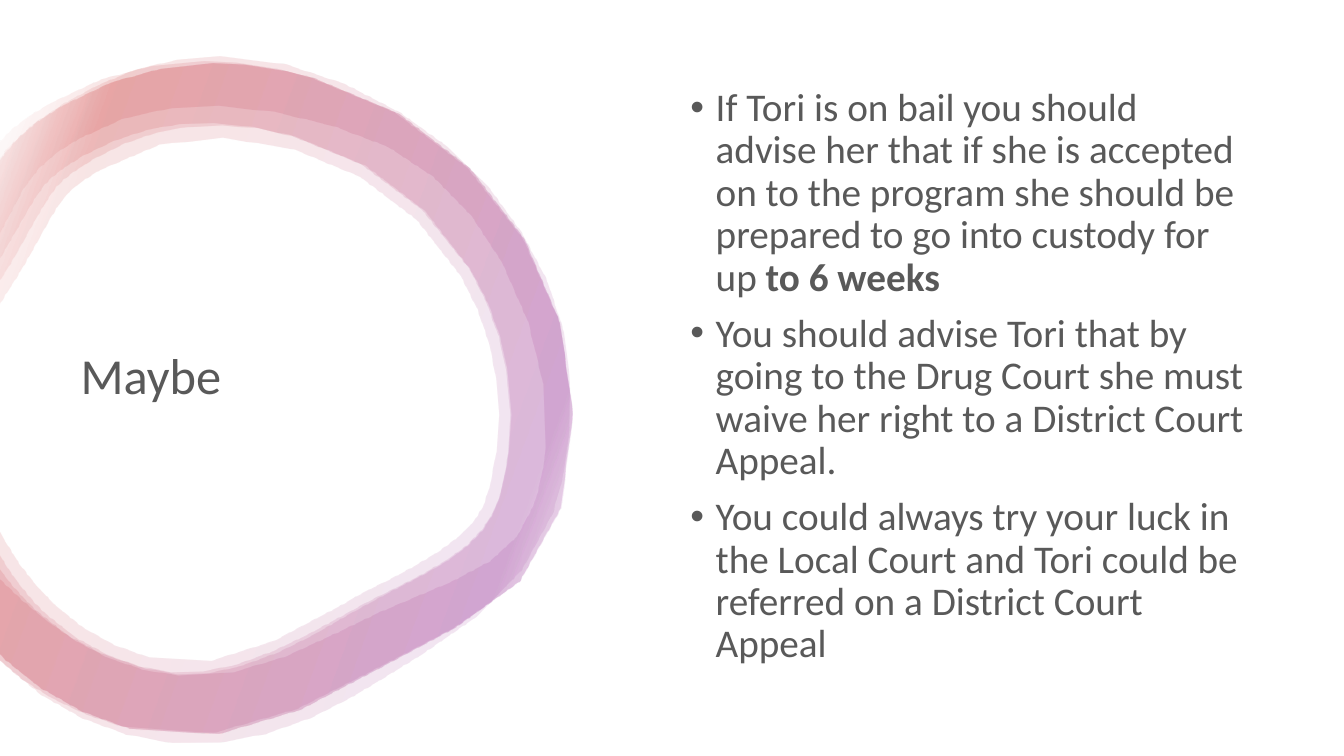
import pptx
import pptx.dml.color
import pptx.enum.shapes
import pptx.enum.text
import pptx.oxml
import pptx.oxml.ns
import pptx.util

PX = 9144
SLIDE = (1333, 750)
CURVE_STEPS = 3

TITLE = "Maybe"
TITLE_BOX = (70, 136, 422, 478)
ADVICE_BOX = (675, 88, 571, 572)
ADVICE = [
    [("If Tori is on bail you should advise her that if she is accepted on to the "
      "program she should be prepared to go into custody for up ", False),
     ("to 6 weeks", True)],
    [("You should advise Tori that by going to the Drug Court she must waive her "
      "right to a District Court Appeal.", False)],
    [("You could always try your luck in the Local Court and Tori could be "
      "referred on a District Court Appeal", False)],
]
TEXT_COLOR = "595959"
FONT = "Calibri"

RING_STOPS = [(2, "FFFFFF"), (16, "800080"), (85, "C00000"), (100, "FFFFFF")]
RING_ALPHA = 10
RING_ANGLE = 200

PALE_RING = [
    (218, 56),
    (284, 56, 344, 80, 397, 112), (445, 142, 488, 182, 517, 231),
    (545, 275, 565, 330, 565, 383), (565, 426, 562, 469, 548, 508),
    (526, 570, 475, 616, 418, 649), (382, 671, 348, 694, 308, 712),
    (264, 731, 218, 741, 171, 737), (125, 732, 80, 716, 41, 689),
    (-2, 653), (-2, 572),
    (21, 595, 47, 618, 76, 636), (107, 655, 141, 667, 177, 670),
    (230, 675, 282, 654, 335, 627), (374, 606, 411, 593, 447, 577),
    (493, 557, 516, 536, 528, 502), (535, 482, 539, 463, 540, 444),
    (545, 380, 528, 318, 497, 260), (471, 211, 432, 170, 385, 146),
    (334, 122, 270, 107, 217, 105), (170, 104, 121, 112, 80, 137),
    (57, 149, 37, 165, 24, 187),
    (-2, 236), (-2, 160), (8, 147),
    (29, 121, 65, 101, 96, 85), (133, 66, 175, 56, 218, 56),
]
WIDE_RING = [
    (202, 61),
    (234, 61, 267, 65, 303, 75), (397, 100, 472, 160, 518, 237),
    (565, 315, 581, 410, 556, 504), (531, 597, 452, 618, 373, 663),
    (295, 707, 217, 746, 122, 721), (83, 710, 50, 694, 21, 673),
    (-2, 653), (-2, 561), (0, 564),
    (11, 580, 24, 594, 37, 606), (66, 633, 99, 651, 138, 661),
    (170, 670, 201, 669, 235, 659), (271, 648, 307, 629, 342, 609),
    (358, 600, 373, 592, 388, 585), (418, 570, 443, 557, 462, 541),
    (479, 526, 490, 510, 496, 488), (506, 450, 508, 411, 502, 373),
    (497, 335, 484, 300, 465, 267), (425, 202, 362, 154, 287, 134),
    (247, 123, 211, 120, 178, 123), (145, 127, 114, 137, 82, 155),
    (60, 168, 51, 176, 45, 183), (37, 193, 30, 205, 20, 223),
    (-2, 261), (-2, 143),
    (10, 128, 26, 116, 51, 102), (100, 74, 149, 61, 202, 61),
]
CORE_OUTER = [
    (211, 63),
    (242, 63, 275, 67, 310, 77), (402, 102, 476, 161, 520, 237),
    (566, 315, 581, 410, 556, 504), (531, 597, 453, 619, 376, 663),
    (299, 708, 222, 747, 129, 723), (79, 709, 38, 685, 4, 653),
    (-2, 646),
]
THICK_INNER = [
    (-2, 523), (4, 534),
    (19, 561, 36, 582, 55, 600), (81, 625, 112, 642, 148, 652),
    (212, 669, 268, 641, 339, 600), (355, 590, 371, 582, 386, 575),
    (414, 560, 438, 547, 455, 532), (471, 519, 480, 505, 485, 485),
    (495, 448, 497, 411, 492, 375), (487, 339, 475, 305, 457, 274),
    (420, 212, 361, 167, 291, 148), (216, 128, 159, 134, 99, 169),
    (79, 181, 71, 188, 66, 194), (58, 203, 51, 215, 42, 232),
    (32, 250, 20, 272, 2, 299), (-2, 306),
]
THIN_INNER = [
    (-2, 547), (10, 566),
    (21, 582, 33, 597, 46, 609), (74, 635, 107, 653, 145, 663),
    (176, 672, 207, 671, 241, 660), (276, 650, 312, 630, 345, 610),
    (361, 601, 376, 593, 391, 585), (420, 570, 445, 558, 463, 542),
    (481, 527, 491, 510, 497, 488), (507, 450, 510, 411, 504, 373),
    (499, 336, 487, 301, 467, 268), (429, 203, 367, 156, 294, 136),
    (255, 125, 220, 122, 187, 126), (155, 129, 124, 140, 93, 158),
    (71, 171, 62, 179, 56, 186), (48, 196, 41, 209, 31, 226),
    (23, 241, 14, 258, 0, 279), (-2, 283),
]
CORE_END = [
    (-2, 163), (4, 154),
    (17, 136, 33, 122, 62, 105), (110, 77, 159, 64, 211, 63),
]
RINGS = [PALE_RING, WIDE_RING,
         CORE_OUTER + THICK_INNER + CORE_END,
         CORE_OUTER + THIN_INNER + CORE_END]


def color(value):
    return pptx.dml.color.RGBColor.from_string(value)


def emu(lengths):
    return [round(length * PX) for length in lengths]


def outline_points(outline):
    x, y = outline[0]
    points = []
    for step in outline[1:]:
        if len(step) == 2:
            points.append(step)
        else:
            x1, y1, x2, y2, x3, y3 = step
            for i in range(1, CURVE_STEPS + 1):
                t = i / CURVE_STEPS
                u = 1 - t
                a, b, c, d = u ** 3, 3 * u * u * t, 3 * u * t * t, t ** 3
                points.append((a * x + b * x1 + c * x2 + d * x3,
                               a * y + b * y1 + c * y2 + d * y3))
        x, y = step[-2:]
    return [emu(point) for point in points]


def draw_ring(slide, outline):
    builder = slide.shapes.build_freeform(*emu(outline[0]), scale=1.0)
    builder.add_line_segments(outline_points(outline), close=True)
    ring = builder.convert_to_shape()
    ring.shadow.inherit = False
    ring.line.fill.background()
    stops = "".join(
        f'<a:gs pos="{pos * 1000}"><a:srgbClr val="{value}">'
        f'<a:alpha val="{RING_ALPHA * 1000}"/></a:srgbClr></a:gs>'
        for pos, value in RING_STOPS)
    gradient = pptx.oxml.parse_xml(
        f'<a:gradFill {pptx.oxml.ns.nsdecls("a")} rotWithShape="1">'
        f'<a:gsLst>{stops}</a:gsLst>'
        f'<a:lin ang="{RING_ANGLE * 60000}" scaled="0"/></a:gradFill>')
    ring.fill.background()
    properties = ring._element.spPr
    properties.replace(properties.find(pptx.oxml.ns.qn("a:noFill")), gradient)


def set_frame(shape):
    frame = shape.text_frame
    frame.word_wrap = True
    frame.auto_size = pptx.enum.text.MSO_AUTO_SIZE.NONE
    frame.vertical_anchor = pptx.enum.text.MSO_ANCHOR.MIDDLE
    return frame


def format_paragraph(paragraph, size):
    paragraph.alignment = pptx.enum.text.PP_ALIGN.LEFT
    paragraph.line_spacing = 0.9
    for run in paragraph.runs:
        run.font.size = pptx.util.Pt(size)
        run.font.name = FONT
        run.font.color.rgb = color(TEXT_COLOR)


def add_bullet(paragraph):
    properties = paragraph._p.get_or_add_pPr()
    properties.set("marL", str(25 * PX))
    properties.set("indent", str(-25 * PX))
    for tag, key, value in [("buFont", "typeface", "Arial"), ("buChar", "char", "•")]:
        properties.append(pptx.oxml.parse_xml(
            f'<a:{tag} {pptx.oxml.ns.nsdecls("a")} {key}="{value}"/>'))


def main():
    deck = pptx.Presentation()
    deck.slide_width, deck.slide_height = emu(SLIDE)
    slide = deck.slides.add_slide(deck.slide_layouts[5])

    backdrop = slide.shapes.add_shape(
        pptx.enum.shapes.MSO_SHAPE.RECTANGLE, 0, 0, *emu(SLIDE))
    backdrop.shadow.inherit = False
    backdrop.fill.solid()
    backdrop.fill.fore_color.rgb = color("FFFFFF")
    backdrop.line.fill.background()

    for outline in RINGS:
        draw_ring(slide, outline)

    title = slide.shapes.title
    slide.shapes._spTree.append(title._element)
    title.left, title.top, title.width, title.height = emu(TITLE_BOX)
    heading = set_frame(title)
    heading.text = TITLE
    format_paragraph(heading.paragraphs[0], 36)

    advice = set_frame(slide.shapes.add_textbox(*emu(ADVICE_BOX)))
    for i, parts in enumerate(ADVICE):
        paragraph = advice.add_paragraph() if i else advice.paragraphs[0]
        for words, bold in parts:
            run = paragraph.add_run()
            run.text = words
            run.font.bold = bold
        format_paragraph(paragraph, 28)
        paragraph.space_before = pptx.util.Pt(10)
        add_bullet(paragraph)

    deck.save("out.pptx")


if __name__ == "__main__":
    main()
